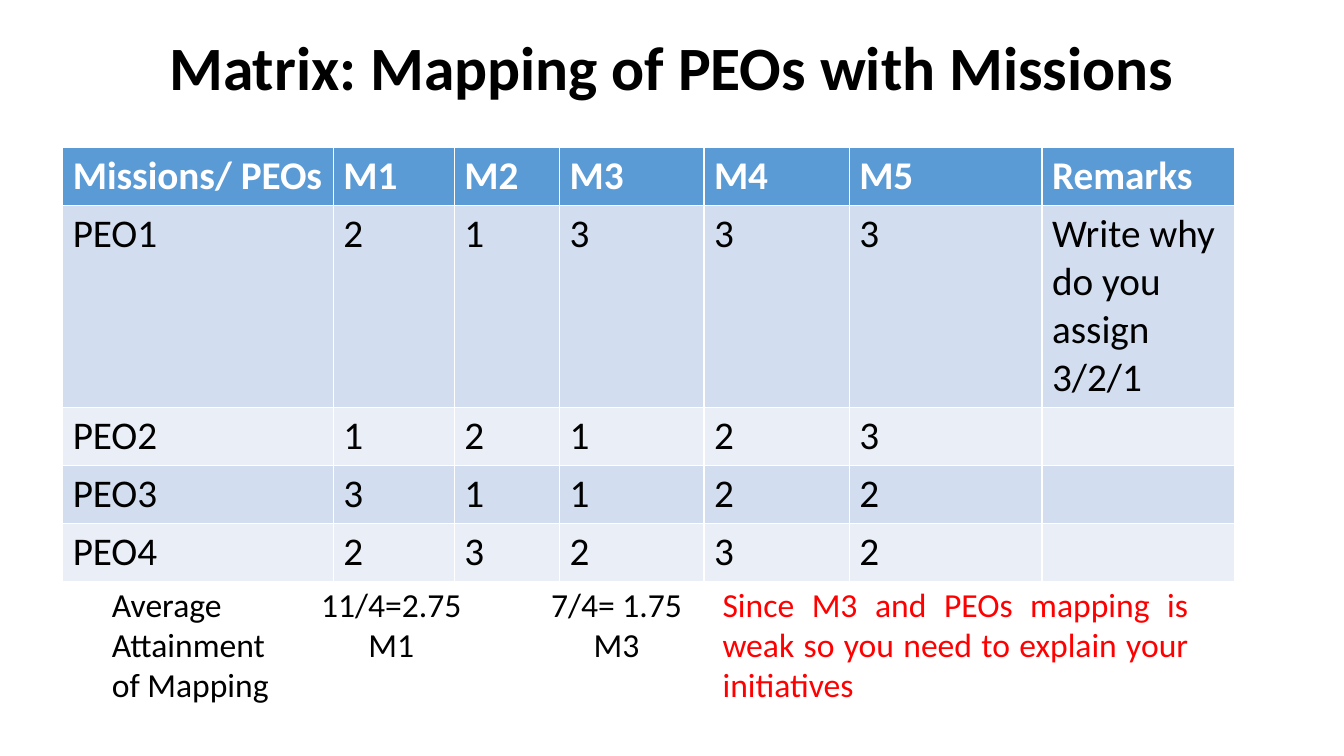
from pptx import Presentation
from pptx import util as u
from pptx.dml.color import RGBColor
from pptx.enum import text

COLORS = {
    "ink": "000000",
    "white": "FFFFFF",
    "alert": "FF0000",
    "header": "5B9BD5",
    "band_dark": "D2DEEF",
    "band_light": "EAEFF7",
}
ALIGN = text.PP_ALIGN


def write(frame, content, size=24, color="ink", bold=False, align=ALIGN.LEFT, spacing=None):
    """Fill a text frame, one paragraph per line of content."""
    frame.text = content
    for paragraph in frame.paragraphs:
        paragraph.alignment = align
        paragraph.line_spacing = spacing
        font = paragraph.font
        font.name, font.size, font.bold = "Calibri", u.Pt(size), bold
        font.color.rgb = RGBColor.from_string(COLORS[color])
        for run in paragraph.runs:
            run.font.name, run.font.size, run.font.bold = "Calibri", u.Pt(size), bold
            run.font.color.rgb = RGBColor.from_string(COLORS[color])


class MappingSlide:
    def __init__(self, deck):
        self.slide = deck.slides.add_slide(deck.slide_layouts[5])

    def title(self, content, left, top, width, height):
        heading = self.slide.shapes.title
        heading.left, heading.top = u.Cm(left), u.Cm(top)
        heading.width, heading.height = u.Cm(width), u.Cm(height)
        write(heading.text_frame, content, size=44, bold=True, align=ALIGN.CENTER, spacing=0.9)
        heading.text_frame.vertical_anchor = text.MSO_ANCHOR.MIDDLE

    def matrix(self, rows, left, top, widths, heights):
        table = self.slide.shapes.add_table(
            len(rows), len(widths), u.Cm(left), u.Cm(top),
            u.Cm(sum(widths)), u.Cm(sum(heights))).table
        for column, width in zip(table.columns, widths):
            column.width = u.Cm(width)
        for r, (values, height) in enumerate(zip(rows, heights)):
            table.rows[r].height = u.Cm(height)
            is_header = r == 0
            fill = "header" if is_header else ("band_light", "band_dark")[r % 2]
            for c, value in enumerate(values):
                cell = table.cell(r, c)
                cell.fill.solid()
                cell.fill.fore_color.rgb = RGBColor.from_string(COLORS[fill])
                write(cell.text_frame, value, size=28, bold=is_header,
                      color="white" if is_header else "ink")

    def note(self, content, left, top, width, height, **style):
        box = self.slide.shapes.add_textbox(u.Cm(left), u.Cm(top), u.Cm(width), u.Cm(height))
        box.text_frame.word_wrap = True
        box.text_frame.auto_size = text.MSO_AUTO_SIZE.SHAPE_TO_FIT_TEXT
        write(box.text_frame, content, **style)


def main():
    deck = Presentation()
    deck.slide_width, deck.slide_height = u.Cm(33.87), u.Cm(19.05)
    page = MappingSlide(deck)

    # Heading
    page.title("Matrix: Mapping of PEOs with Missions", 2.33, 0.66, 29.21, 2.26)

    # Mission scores for each PEO
    scores = [
        ["Missions/ PEOs", "M1", "M2", "M3", "M4", "M5", "Remarks"],
        ["PEO1", "2", "1", "3", "3", "3", "Write why do you assign 3/2/1"],
        ["PEO2", "1", "2", "1", "2", "3", ""],
        ["PEO3", "3", "1", "1", "2", "2", ""],
        ["PEO4", "2", "3", "2", "3", "2", ""],
    ]
    page.matrix(scores, 1.58, 3.72,
                widths=[6.82, 3.05, 2.65, 3.64, 3.66, 4.86, 4.86],
                heights=[1.46, 5.08, 1.46, 1.46, 1.46])

    # Averages and the conclusion below the matrix
    notes_top = 14.58
    page.note("Average Attainment of Mapping", 2.57, notes_top, 5.16, 3.33)
    page.note("11/4=2.75\nM1", 7.75, notes_top, 4.22, 2.31, align=ALIGN.CENTER)
    page.note("7/4= 1.75\nM3", 13.56, notes_top, 3.96, 2.31, align=ALIGN.CENTER)
    page.note("Since M3 and PEOs mapping is weak so you need to explain your initiatives",
              17.96, notes_top, 12.24, 3.33, color="alert", align=ALIGN.JUSTIFY)

    deck.save("out.pptx")


if __name__ == "__main__":
    main()
